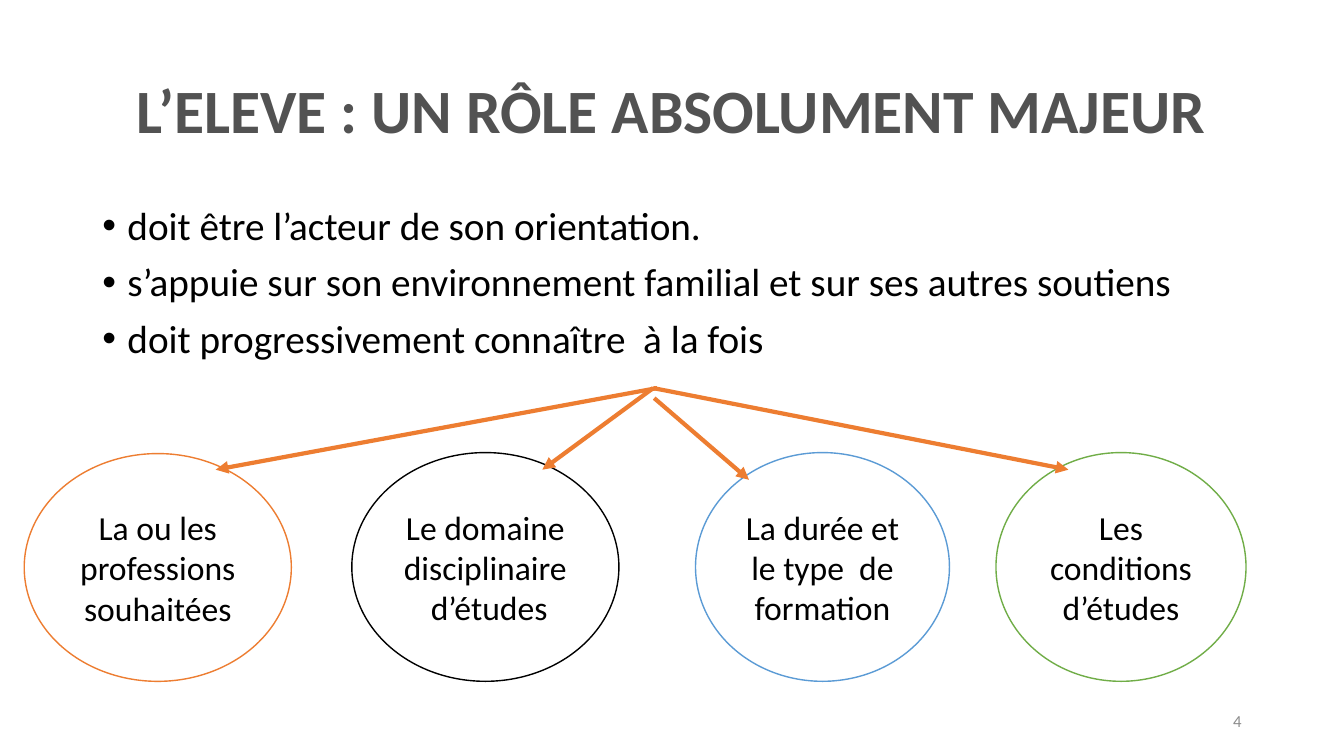
from lxml import etree
from pptx import Presentation
from pptx.dml.color import RGBColor
from pptx.enum.shapes import MSO_CONNECTOR, MSO_SHAPE
from pptx.enum.text import MSO_ANCHOR, PP_ALIGN
from pptx.oxml.ns import qn
from pptx.util import Pt

LEFT, MID, RIGHT = PP_ALIGN.LEFT, PP_ALIGN.CENTER, PP_ALIGN.RIGHT
TOP, CENTER = MSO_ANCHOR.TOP, MSO_ANCHOR.MIDDLE
OVAL, LINE = MSO_SHAPE.OVAL, MSO_CONNECTOR.STRAIGHT
FONT, BLACK, ORANGE = "Calibri", "000000", "ED7D31"

POINTS = [
    "doit être l’acteur de son orientation.",
    "s’appuie sur son environnement familial et sur ses autres soutiens",
    "doit progressivement connaître  à la fois",
]
TOPICS = [
    ("La ou les professions souhaitées", ORANGE, (17.3, 324, 190.8, 162.7)),
    ("Le domaine disciplinaire  d’études", BLACK, (251.3, 323.3, 190.8, 163.4)),
    ("La durée et le type  de formation", "5B9BD5", (496.8, 323.3, 181.4, 163.4)),
    ("Les conditions d’études", "70AD47", (711.4, 323.3, 178.6, 163.4)),
]
ARROWS = [
    ((466.6, 277.2), (763.2, 335.5)),
    ((469.4, 277.2), (154.1, 335.5)),
    ((466.6, 277.2), (387.4, 335.5)),
    ((467.3, 284.4), (535, 342.7)),
]


def color(code):
    """Turn a hex string into a colour."""
    return RGBColor.from_string(code)


def write(shape, text, size, code, align=MID, anchor=CENTER, bold=False):
    """Fill a shape with styled text."""
    frame = shape.text_frame
    frame.word_wrap = True
    frame.vertical_anchor = anchor
    frame.text = text
    for para in frame.paragraphs:
        para.alignment = align
        for run in para.runs:
            font = run.font
            font.name, font.size, font.bold = FONT, Pt(size), bold
            font.color.rgb = color(code)
    return frame


def add_text(slide, box, *args, **style):
    """Add a text box in the given box."""
    shape = slide.shapes.add_textbox(*map(Pt, box))
    return write(shape, *args, **style)


def add_title(slide, box):
    """Add the slide title."""
    frame = add_text(slide, box, "L’ELEVE : UN RÔLE ABSOLUMENT MAJEUR",
                     44, "525252", bold=True)
    frame.paragraphs[0].line_spacing = 0.9


def add_list(slide, box):
    """Add the bulleted list."""
    frame = add_text(slide, box, "\n".join(POINTS), 28, BLACK, LEFT, TOP)
    for para in frame.paragraphs:
        para.line_spacing = 0.9
        para.space_before = Pt(10)
        props = para._p.get_or_add_pPr()
        props.set("marL", str(Pt(18)))
        props.set("indent", str(Pt(-18)))
        etree.SubElement(props, qn("a:buFont")).set("typeface", "Arial")
        etree.SubElement(props, qn("a:buChar")).set("char", "•")


def add_topic(slide, box, text, code):
    """Add one outlined oval with its label."""
    oval = slide.shapes.add_shape(OVAL, *map(Pt, box))
    oval.shadow.inherit = False
    oval.fill.solid()
    oval.fill.fore_color.rgb = color("FFFFFF")
    oval.line.color.rgb = color(code)
    oval.line.width = Pt(1)
    write(oval, text, 24, BLACK)


def add_arrow(slide, start, end):
    """Add one arrow from start to end."""
    arrow = slide.shapes.add_connector(LINE, *map(Pt, start + end))
    arrow.line.color.rgb = color(ORANGE)
    arrow.line.width = Pt(3)
    tip = etree.SubElement(arrow.line._get_or_add_ln(), qn("a:tailEnd"))
    tip.set("type", "triangle")
    etree.SubElement(arrow._element.spPr, qn("a:effectLst"))


def main():
    """Build and save the slide."""
    deck = Presentation()
    deck.slide_width, deck.slide_height = Pt(960), Pt(540)
    slide = deck.slides.add_slide(deck.slide_layouts[6])
    add_title(slide, (66, 28.8, 828, 104.4))
    add_list(slide, (66, 144, 828, 342.7))
    add_text(slide, (678, 500.4, 216, 28.8), "4", 12, "8C8C8C", RIGHT)
    for text, code, box in TOPICS:
        add_topic(slide, box, text, code)
    for start, end in ARROWS:
        add_arrow(slide, start, end)
    deck.save("out.pptx")


if __name__ == "__main__":
    main()
